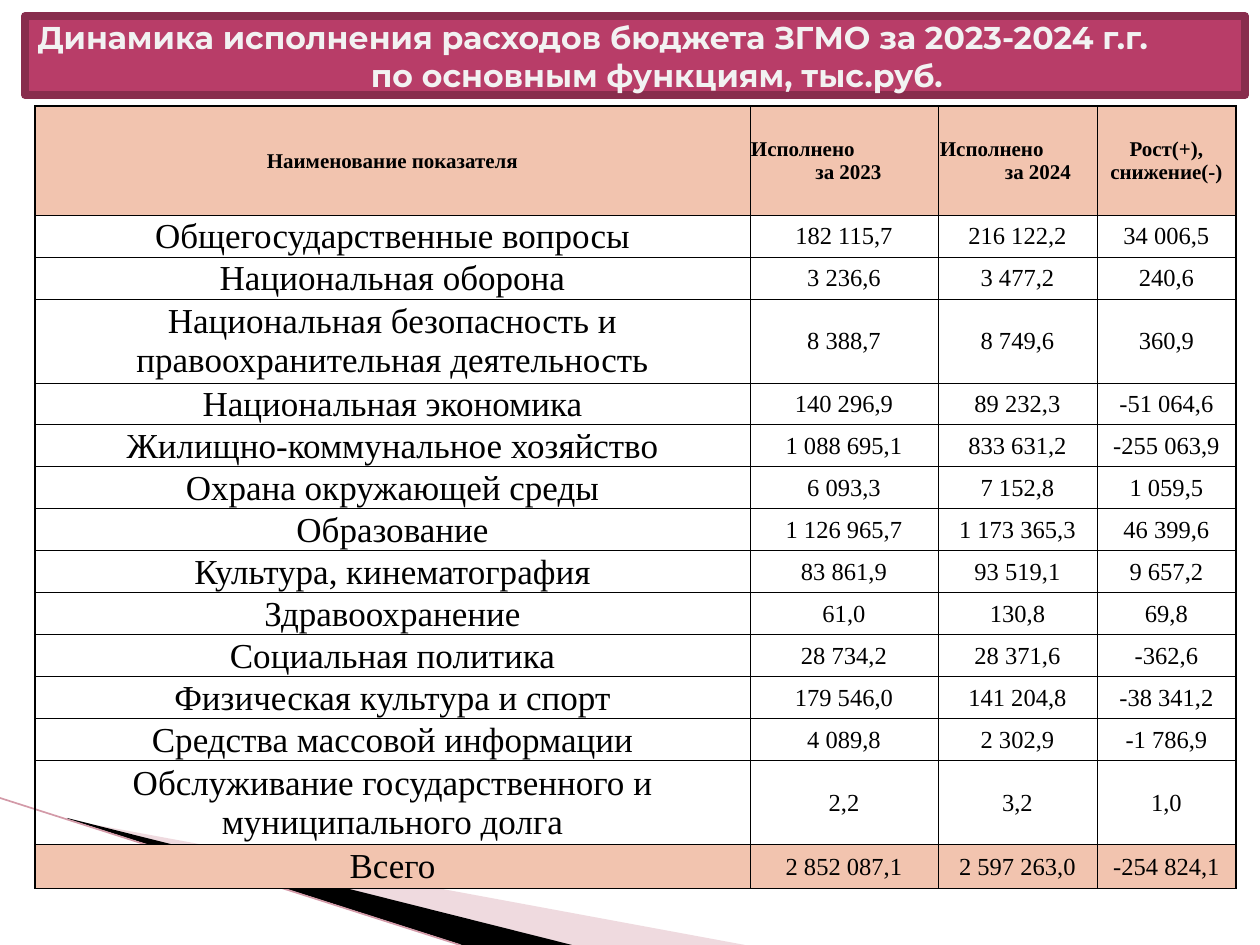
from dataclasses import dataclass

from lxml import etree
from pptx import Presentation
from pptx.dml.color import RGBColor
from pptx.enum.shapes import MSO_CONNECTOR
from pptx.enum.text import MSO_ANCHOR, MSO_AUTO_SIZE, PP_ALIGN
from pptx.oxml.ns import qn
from pptx.util import Emu, Pt

LEFT, CENTER = PP_ALIGN.LEFT, PP_ALIGN.CENTER
MIDDLE = MSO_ANCHOR.MIDDLE
STRAIGHT = MSO_CONNECTOR.STRAIGHT
NO_FIT = MSO_AUTO_SIZE.NONE
EMU_PER_PX = 914400 / 126
TITLE_ONLY = 5


@dataclass(frozen=True)
class Theme:
    banner: str = "B83D68"
    banner_edge: str = "882D4D"
    title_text: str = "F2F2F2"
    ink: str = "000000"
    accent_cell: str = "F2C4AF"
    pale_wedge: str = "D8A3AF"
    thin_line: str = "D39AA8"
    title_font: str = "Montserrat"
    table_font: str = "Times New Roman"
    title_size: int = 18
    header_size: int = 12
    name_size: int = 20
    value_size: int = 14


THEME = Theme()

# Each header line: text, alignment, left indent in px
HEADERS = [
    [("Наименование показателя", CENTER, 0)],
    [("Исполнено", LEFT, 0), ("за 2023", CENTER, 9)],
    [("Исполнено", LEFT, 1), ("за 2024", CENTER, 41)],
    [("Рост(+), снижение(-)", CENTER, 0)],
]
EXPENSES = [
    ("Общегосударственные вопросы", "182 115,7", "216 122,2", "34 006,5"),
    ("Национальная оборона", "3 236,6", "3 477,2", "240,6"),
    ("Национальная безопасность и правоохранительная деятельность",
     "8 388,7", "8 749,6", "360,9"),
    ("Национальная экономика", "140 296,9", "89 232,3", "-51 064,6"),
    ("Жилищно-коммунальное хозяйство", "1 088 695,1", "833 631,2", "-255 063,9"),
    ("Охрана окружающей среды", "6 093,3", "7 152,8", "1 059,5"),
    ("Образование", "1 126 965,7", "1 173 365,3", "46 399,6"),
    ("Культура, кинематография", "83 861,9", "93 519,1", "9 657,2"),
    ("Здравоохранение", "61,0", "130,8", "69,8"),
    ("Социальная политика", "28 734,2", "28 371,6", "-362,6"),
    ("Физическая культура и спорт", "179 546,0", "141 204,8", "-38 341,2"),
    ("Средства массовой информации", "4 089,8", "2 302,9", "-1 786,9"),
    ("Обслуживание государственного и муниципального долга", "2,2", "3,2", "1,0"),
    ("Всего", "2 852 087,1", "2 597 263,0", "-254 824,1"),
]
COLUMN_WIDTHS = [715, 188, 159, 139]
HEADER_HEIGHT, LINE_HEIGHT, TOTAL_HEIGHT = 109, 42, 44
LONG_NAME = 40  # names longer than this take two lines


def px(length):
    return Emu(round(length * EMU_PER_PX))


def color(code):
    return RGBColor.from_string(code)


def add_solid_fill(parent, code):
    fill = etree.SubElement(parent, qn("a:solidFill"))
    return etree.SubElement(fill, qn("a:srgbClr"), val=code)


def write_lines(frame, lines, font, size, ink, bold=False):
    """Write (text, alignment, indent) lines as paragraphs; return the spans."""
    spans = []
    for index, (text, alignment, indent) in enumerate(lines):
        para = frame.paragraphs[0] if index == 0 else frame.add_paragraph()
        para.alignment = alignment
        if indent:
            para._p.get_or_add_pPr().set("marL", str(px(indent)))
        span = para.add_run()
        span.text = text
        span.font.name, span.font.size, span.font.bold = font, Pt(size), bold
        span.font.color.rgb = color(ink)
        spans.append(span)
    return spans


def add_wedge(page, points, code, opacity=None):
    builder = page.shapes.build_freeform(*points[0], scale=EMU_PER_PX)
    builder.add_line_segments(points[1:], close=True)
    wedge = builder.convert_to_shape()
    wedge.shadow.inherit = False
    wedge.line.fill.background()
    wedge.fill.solid()
    wedge.fill.fore_color.rgb = color(code)
    if opacity:
        shade = wedge._element.spPr.find(".//" + qn("a:srgbClr"))
        etree.SubElement(shade, qn("a:alpha"), val=str(opacity * 1000))


def add_thin_line(page, start, end):
    line = page.shapes.add_connector(STRAIGHT, *map(px, start + end))
    line.line.color.rgb = color(THEME.thin_line)
    line.line.width = Pt(0.95)
    etree.SubElement(line._element.spPr, qn("a:effectLst"))


def format_title(page):
    banner = page.shapes.title
    banner.left, banner.top, banner.width, banner.height = map(px, (25, 16, 1220, 79))
    outline = etree.SubElement(banner._element.spPr, qn("a:prstGeom"), prst="roundRect")
    etree.SubElement(outline, qn("a:avLst"))
    banner.fill.solid()
    banner.fill.fore_color.rgb = color(THEME.banner)
    banner.line.color.rgb = color(THEME.banner_edge)
    banner.line.width = Pt(4.33)
    frame = banner.text_frame
    frame.word_wrap, frame.auto_size = True, NO_FIT
    frame.vertical_anchor = MIDDLE
    lines = [("Динамика исполнения расходов бюджета ЗГМО за 2023-2024 г.г.", LEFT, 0),
             ("по основным функциям, тыс.руб.", CENTER, 44)]
    for span in write_lines(frame, lines, THEME.title_font, THEME.title_size,
                            THEME.title_text, bold=True):
        edge = etree.Element(qn("a:ln"), w=str(Pt(1)))
        add_solid_fill(edge, THEME.banner)
        span.font._element.insert(0, edge)


def format_cell(cell, lines, size, bold, filled, outer_sides):
    cell.margin_left = cell.margin_top = cell.margin_right = px(1)
    cell.margin_bottom = 0
    cell.vertical_anchor = MIDDLE
    write_lines(cell.text_frame, lines, THEME.table_font, size, THEME.ink, bold)
    # Borders come before the fill in the cell properties
    properties = cell._tc.get_or_add_tcPr()
    for side in "LRTB":
        width = Pt(1 if side in outer_sides else 0.5)
        border = etree.SubElement(properties, qn("a:ln" + side), w=str(width))
        add_solid_fill(border, THEME.ink)
    if filled:
        cell.fill.solid()
        cell.fill.fore_color.rgb = color(THEME.accent_cell)
    else:
        cell.fill.background()


def add_expense_table(page):
    heights = [HEADER_HEIGHT]
    heights += [LINE_HEIGHT * (2 if len(row[0]) > LONG_NAME else 1) for row in EXPENSES[:-1]]
    heights.append(TOTAL_HEIGHT)
    rows = [HEADERS] + [[[(text, CENTER, 0)] for text in row] for row in EXPENSES]
    table = page.shapes.add_table(len(rows), len(COLUMN_WIDTHS), px(35), px(106),
                                  px(sum(COLUMN_WIDTHS)), px(sum(heights))).table
    table.first_row = table.horz_banding = False
    for column, width in zip(table.columns, COLUMN_WIDTHS):
        column.width = px(width)
    last_row, last_column = len(rows) - 1, len(COLUMN_WIDTHS) - 1
    for r, row in enumerate(rows):
        table.rows[r].height = px(heights[r])
        for c, lines in enumerate(row):
            size = THEME.name_size if c == 0 else THEME.value_size
            outer = [side for side, at_edge in (("L", c == 0), ("R", c == last_column),
                                                ("T", r == 0), ("B", r == last_row)) if at_edge]
            format_cell(table.cell(r, c), lines, THEME.header_size if r == 0 else size,
                        r == 0, r in (0, last_row), outer)


def main():
    deck = Presentation()
    deck.slide_width, deck.slide_height = px(1260), px(945)
    page = deck.slides.add_slide(deck.slide_layouts[TITLE_ONLY])
    format_title(page)
    # Corner decoration
    add_wedge(page, [(69, 820), (745, 945), (571, 945), (69, 819)], THEME.pale_wedge, 40)
    add_wedge(page, [(67, 818), (572, 945), (462, 945), (68, 819)], THEME.ink)
    add_thin_line(page, (0, 798), (460, 945))
    add_expense_table(page)
    deck.save("out.pptx")


if __name__ == "__main__":
    main()
